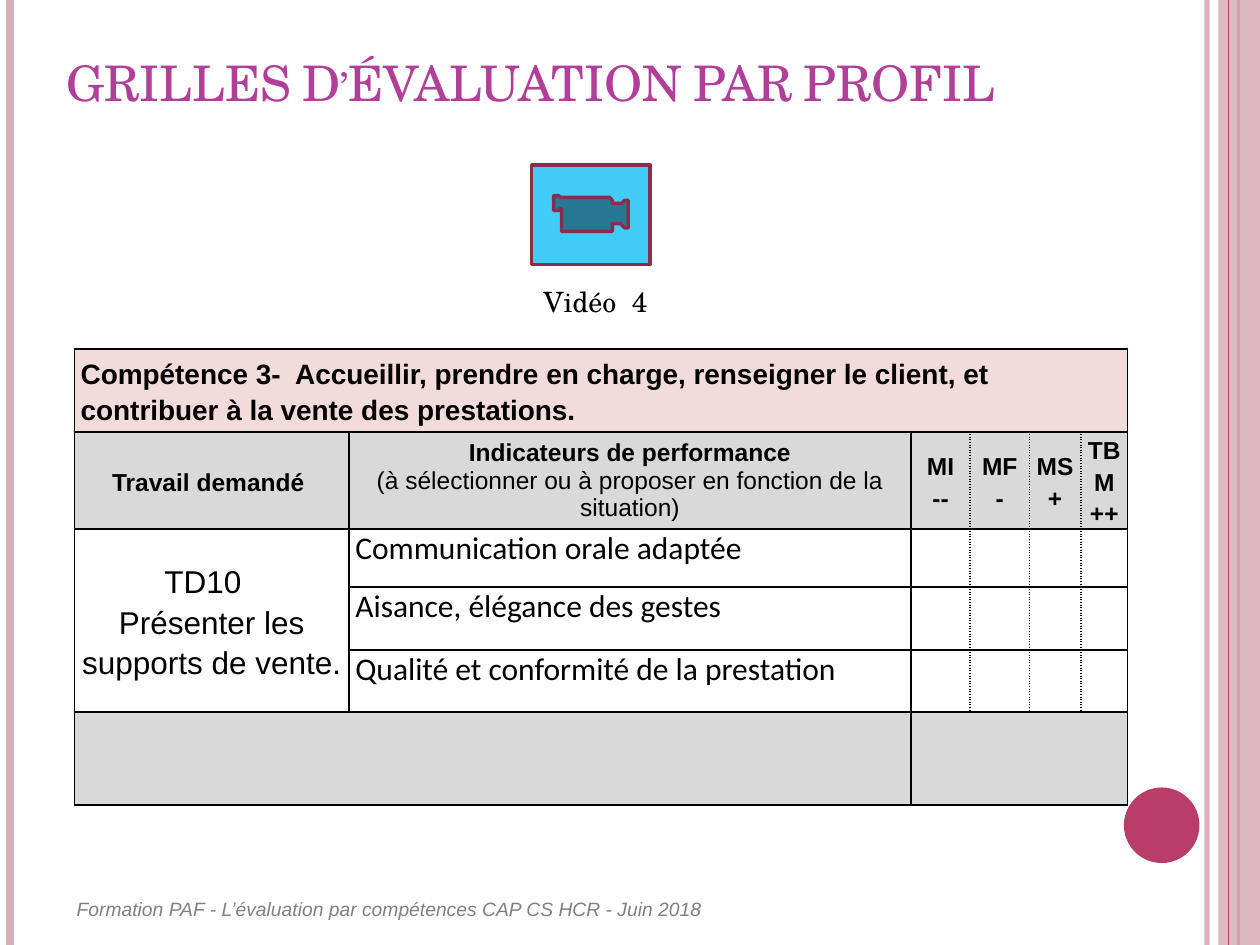
from lxml.etree import SubElement
from pptx import Presentation
from pptx.dml.color import RGBColor
from pptx.enum.shapes import MSO_CONNECTOR, MSO_SHAPE as Shape
from pptx.enum.text import MSO_ANCHOR as Anchor, PP_ALIGN as Align
from pptx.oxml import parse_xml
from pptx.oxml.ns import nsdecls, qn
from pptx.util import Inches, Pt

HUE = {"white": "FFFFFF", "black": "000000", "rose": "D8AFB9", "berry": "B83D68",
       "title": "B13F9A", "sky": "42CBF6", "wine": "882D4D", "gray": "808080",
       "band": "F2DBDB", "head": "D9D9D9"}
SERIF = "TeX Gyre Schola"

# x, colour, width, opacity
BACK = [(9.58, "rose", 3, 93), (0.08, "rose", 4.5, 100), (9.83, "berry", 1.5, 100)]
FRONT = [(9.75, "berry", 0.75, 100)]

COLS = [2.18, 4.46, 0.47, 0.47, 0.41, 0.37]
ROWS = [0.66, 0.77, 0.46, 0.5, 0.49, 0.74]
SPANS = [(0, 0, 0, 5), (2, 0, 4, 0), (5, 0, 5, 1), (5, 2, 5, 5)]
FILLS = ["band", "head", "white", "white", "white", "head"]
MARKS = [("MI", "--"), ("MF", "-"), ("MS", "+"), ("TBM", "++")]
SKILLS = ["Communication orale adaptée", "Aisance, élégance des gestes",
          "Qualité et conformité de la prestation"]

BOLD = {"size": Pt(14), "name": "Arial", "bold": True}
LEAD = {**BOLD, "size": Pt(16)}
TASK = {**BOLD, "size": Pt(18), "bold": False}
SKILL = {**TASK, "name": "Calibri"}
LOOSE = {"alignment": Align.CENTER, "line_spacing": 1.15}
MID = {"alignment": Align.CENTER}

# (row, column): lines of (text, font, paragraph format)
CELLS = {
    (0, 0): [("Compétence 3-  Accueillir, prendre en charge, renseigner le client, "
              "et contribuer à la vente des prestations.", LEAD, {"line_spacing": 1.15})],
    (1, 0): [("Travail demandé ", BOLD, LOOSE)],
    (1, 1): [("Indicateurs de performance", BOLD, MID),
             ("(à sélectionner ou à proposer en fonction de la situation)",
              {**BOLD, "bold": False}, MID)],
    (2, 0): [("TD10  ", TASK, LOOSE), ("Présenter les supports de vente.", TASK, LOOSE)],
}
for i, mark in enumerate(MARKS):
    CELLS[1, 2 + i] = [(line, BOLD, LOOSE) for line in mark]
for i, skill in enumerate(SKILLS):
    CELLS[2 + i, 1] = [(skill, SKILL, {})]


def rgb(hue):
    return RGBColor.from_string(HUE[hue])


def assign(item, props):
    for key, val in props.items():
        setattr(item, key, val)


def fade(part, pct):
    """Set the opacity of every solid colour inside an XML part."""
    if pct < 100:
        for tone in part.iter(qn("a:srgbClr")):
            SubElement(tone, qn("a:alpha"), val=str(pct * 1000))


def write(frame, lines, hue="black"):
    for i, (text, font, form) in enumerate(lines):
        para = frame.add_paragraph() if i else frame.paragraphs[0]
        assign(para, form)
        run = para.add_run()
        run.text = text
        assign(run.font, font)
        run.font.color.rgb = rgb(hue)


def rule(x, hue, width, pct):
    line = shapes.add_connector(MSO_CONNECTOR.STRAIGHT, Inches(x), 0, Inches(x), deck.slide_height)
    line.line.color.rgb = rgb(hue)
    line.line.width = Pt(width)
    props = line._element.spPr
    fade(props, pct)
    SubElement(props, qn("a:effectLst"))


def block(kind, box, fill, edge=None, pct=100):
    item = shapes.add_shape(kind, *map(Inches, box))
    item.shadow.inherit = False
    item.fill.solid()
    item.fill.fore_color.rgb = rgb(fill)
    fade(item._element.spPr, pct)
    if edge:
        item.line.color.rgb = rgb(edge)
        item.line.width = Pt(2)
    else:
        item.line.fill.background()
    item.text_frame.vertical_anchor = Anchor.MIDDLE
    return item


def border(cell, dots):
    props = cell._tc.get_or_add_tcPr()
    for i, side in enumerate("LRTB"):
        dash = "dot" if side in dots else "solid"
        props.insert(i, parse_xml(
            f'<a:ln{side} {nsdecls("a")} w="12700"><a:solidFill><a:srgbClr val="{HUE["black"]}"/>'
            f'</a:solidFill><a:prstDash val="{dash}"/></a:ln{side}>'))


def grid():
    box = (0.59, 2.77, sum(COLS), sum(ROWS))
    table = shapes.add_table(len(ROWS), len(COLS), *map(Inches, box)).table
    assign(table, {"first_row": False, "horz_banding": False})
    for col, width in zip(table.columns, COLS):
        col.width = Inches(width)
    for row, height in zip(table.rows, ROWS):
        row.height = Inches(height)
    for top, left, low, right in SPANS:
        table.cell(top, left).merge(table.cell(low, right))
    for r, fill in enumerate(FILLS):
        for c in range(len(COLS)):
            cell = table.cell(r, c)
            task = r in (2, 3, 4) and c == 1
            assign(cell, {"margin_left": Inches(0.05), "margin_right": Inches(0.05),
                          "margin_top": 0, "margin_bottom": 0,
                          "vertical_anchor": Anchor.TOP if task else Anchor.MIDDLE})
            cell.fill.solid()
            cell.fill.fore_color.rgb = rgb(fill)
            dots = ""
            if 1 <= r <= 4:
                dots = ("L" if c > 2 else "") + ("R" if 2 <= c < 5 else "")
            border(cell, dots)
            write(cell.text_frame, CELLS.get((r, c), []))
            if task:
                para = cell.text_frame.paragraphs[0]._p.get_or_add_pPr()
                para.set("marL", str(Inches(0.16)))
                para.set("indent", str(-Inches(0.16)))


deck = Presentation()
deck.slide_width, deck.slide_height = Inches(10), Inches(7.5)
shapes = deck.slides.add_slide(deck.slide_layouts[6]).shapes

for line in BACK:
    rule(*line)
block(Shape.RECTANGLE, (9.67, 0, 0.33, 7.5), "rose", pct=87)
for line in FRONT:
    rule(*line)
block(Shape.OVAL, (8.92, 6.25, 0.6, 0.6), "berry")
grid()

title = shapes.add_textbox(*map(Inches, (0.43, 0.29, 8.82, 0.64))).text_frame
assign(title, {"word_wrap": True, "vertical_anchor": Anchor.BOTTOM})
write(title, [("GRILLES D’ÉVALUATION PAR PROFIL", {"size": Pt(28), "name": SERIF}, {})], "title")
title.paragraphs[0].runs[0].font._element.set("cap", "small")

block(Shape.ACTION_BUTTON_MOVIE, (4.22, 1.31, 0.94, 0.79), "sky", "wine")
label = block(Shape.RECTANGLE, (3.87, 2.18, 1.65, 0.43), "white", "white")
write(label.text_frame, [(" Vidéo  4", {"size": Pt(16), "name": SERIF}, MID)])
foot = block(Shape.RECTANGLE, (0.51, 7.06, 8.82, 0.31), "white")
write(foot.text_frame, [("Formation PAF - L’évaluation par compétences CAP CS HCR - Juin 2018",
                         {"size": Pt(11), "name": "Arial", "italic": True},
                         {"alignment": Align.LEFT})], "gray")

deck.save("out.pptx")
